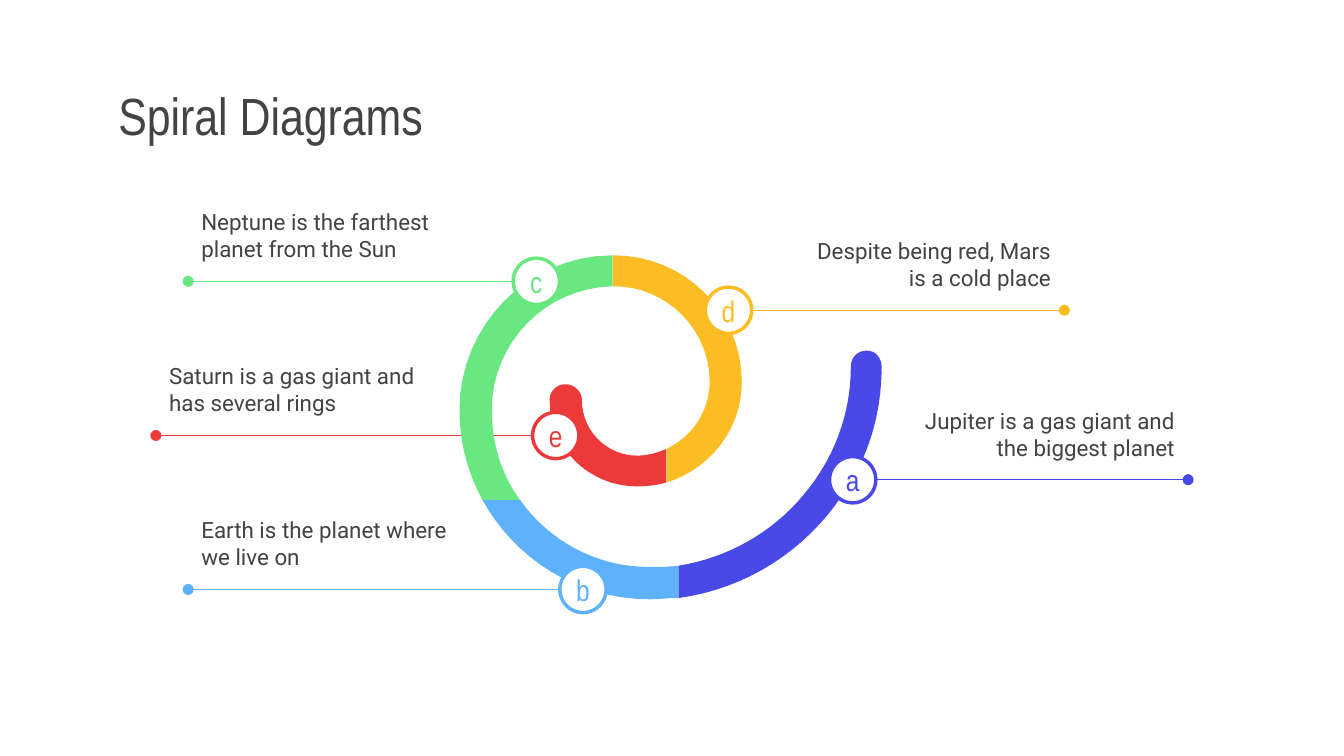
from dataclasses import dataclass

from lxml import etree
from pptx import Presentation
from pptx.dml.color import RGBColor
from pptx.enum.shapes import MSO_CONNECTOR, MSO_SHAPE
from pptx.enum.text import MSO_ANCHOR, MSO_AUTO_SIZE, PP_ALIGN
from pptx.oxml.ns import qn
from pptx.util import Pt

LEFT, CENTER, RIGHT = PP_ALIGN.LEFT, PP_ALIGN.CENTER, PP_ALIGN.RIGHT
MIDDLE = MSO_ANCHOR.MIDDLE
NO_FIT = MSO_AUTO_SIZE.NONE
STRAIGHT = MSO_CONNECTOR.STRAIGHT
OVAL = MSO_SHAPE.OVAL


@dataclass(frozen=True)
class Theme:
    ink: str = "434343"
    paper: str = "FFFFFF"
    red: str = "EC3A3B"
    green: str = "69E781"
    yellow: str = "FCBD24"
    blue: str = "5EB2FC"
    indigo: str = "4949E7"
    display_font: str = "Arial Narrow"
    body_font: str = "Roboto"
    title_size: float = 28
    letter_size: float = 16
    body_size: float = 12
    leader_width: float = 0.75
    ring_width: float = 1.83


THEME = Theme()
BADGE_DIAMETER = 24.8
NOTE_WIDTH, NOTE_HEIGHT, NOTE_RISE = 148.3, 41.8, 45.6
CURVE_STEPS = 16

RED_ARC = [
    (303.1, 205.9),
    (298.1, 205.9, 294.5, 209.5, 294.5, 214.6),
    (294.5, 239.8, 315.4, 260.6, 341.3, 260.6),
    (347, 260.6, 352.1, 259.9, 357.1, 258.5),
    (357.1, 240.5),
    (352.1, 242.6, 347, 244.1, 341.3, 244.1),
    (324.7, 244.1, 311.8, 230.4, 311.8, 214.6),
    (311.8, 209.5, 307.4, 205.9, 303.1, 205.9),
]
GREEN_ARC = [
    (328.3, 136.8),
    (283, 136.8, 246.2, 174.2, 246.2, 219.6),
    (246.2, 236.9, 250.6, 253.4, 258.5, 267.8),
    (278.6, 267.8),
    (268.6, 254.2, 263.5, 237.6, 263.5, 219.6),
    (263.5, 183.6, 292.3, 154.1, 328.3, 153.4),
]
YELLOW_ARC = [
    (328.3, 136.8),
    (328.3, 153.4),
    (329, 153.4),
    (357.1, 153.4, 380.2, 176.4, 380.2, 204.5),
    (380.2, 220.3, 370.8, 234, 357.1, 240.5),
    (357.1, 258.5),
    (380.2, 251.3, 397.4, 230.4, 397.4, 204.5),
    (397.4, 167, 366.5, 136.8, 329, 136.8),
]
BLUE_ARC = [
    (258.5, 267.8),
    (275.8, 299.5, 309.6, 321.1, 347.8, 321.1),
    (352.8, 321.1, 358.6, 320.4, 363.6, 320.4),
    (363.6, 303.1),
    (358.6, 303.8, 352.8, 303.8, 347.8, 303.8),
    (319, 303.8, 293.8, 289.4, 278.6, 267.8),
]
INDIGO_ARC = [
    (464.4, 187.9),
    (459.4, 187.9, 455.8, 191.5, 455.8, 196.6),
    (455.8, 222.5, 446.4, 246.2, 430.6, 265),
    (414, 285.1, 390.2, 298.8, 363.6, 303.1),
    (363.6, 320.4),
    (400.3, 315.4, 432, 294.5, 451.4, 265),
    (465.1, 245.5, 472.3, 221.8, 472.3, 196.6),
    (472.3, 191.5, 468.7, 187.9, 464.4, 187.9),
]

PLANETS = [
    ("e", "Saturn is a gas giant and has several rings", THEME.red, RED_ARC, (297.7, 233.3), 83.5),
    ("c", "Neptune is the farthest planet from the Sun", THEME.green, GREEN_ARC, (287.3, 150.7), 100.8),
    ("d", "Despite being red, Mars is a cold place", THEME.yellow, YELLOW_ARC, (390.3, 166.2), 570.2),
    ("b", "Earth is the planet where we live on", THEME.blue, BLUE_ARC, (312.3, 315.8), 100.8),
    ("a", "Jupiter is a gas giant and the biggest planet", THEME.indigo, INDIGO_ARC, (456.8, 257), 636.5),
]


def color(value):
    return RGBColor.from_string(value)


def write_text(frame, text, *, font, size, ink, align=LEFT, margin=7.2):
    frame.word_wrap = True
    frame.auto_size = NO_FIT
    frame.vertical_anchor = MIDDLE
    frame.margin_left = frame.margin_right = Pt(margin)
    frame.margin_top = frame.margin_bottom = Pt(margin)
    paragraph = frame.paragraphs[0]
    paragraph.alignment = align
    run = paragraph.add_run()
    run.text = text
    run.font.name = font
    run.font.size = Pt(size)
    run.font.color.rgb = color(ink)


def trace(segments):
    points = [segments[0]]
    for segment in segments[1:]:
        if len(segment) == 2:
            points.append(segment)
            continue
        x0, y0 = points[-1]
        x1, y1, x2, y2, x3, y3 = segment
        for step in range(1, CURVE_STEPS + 1):
            t = step / CURVE_STEPS
            weights = ((1 - t) ** 3, 3 * t * (1 - t) ** 2, 3 * t**2 * (1 - t), t**3)
            x = sum(w * v for w, v in zip(weights, (x0, x1, x2, x3)))
            y = sum(w * v for w, v in zip(weights, (y0, y1, y2, y3)))
            points.append((x, y))
    return [(Pt(x), Pt(y)) for x, y in points]


class SpiralSlide:
    def __init__(self, slide, theme):
        self.slide = slide
        self.shapes = slide.shapes
        self.theme = theme

    def title(self, text, left, top, width, height):
        title = self.shapes.title
        title.left, title.top = Pt(left), Pt(top)
        title.width, title.height = Pt(width), Pt(height)
        write_text(title.text_frame, text, font=self.theme.display_font,
                   size=self.theme.title_size, ink=self.theme.ink)

    def leader(self, dot_x, badge_x, y, hue):
        leader = self.shapes.add_connector(STRAIGHT, Pt(dot_x), Pt(y), Pt(badge_x), Pt(y))
        leader.line.color.rgb = color(hue)
        leader.line.width = Pt(self.theme.leader_width)
        etree.SubElement(leader.line._get_or_add_ln(), qn("a:headEnd"), type="oval")
        etree.SubElement(leader._element.spPr, qn("a:effectLst"))

    def arc(self, segments, hue):
        start, *rest = trace(segments)
        builder = self.shapes.build_freeform(*start)
        builder.add_line_segments(rest, close=True)
        arc = builder.convert_to_shape()
        arc.shadow.inherit = False
        arc.fill.solid()
        arc.fill.fore_color.rgb = color(hue)
        arc.line.fill.background()

    def badge(self, letter, x, y, hue):
        radius = BADGE_DIAMETER / 2
        badge = self.shapes.add_shape(OVAL, Pt(x - radius), Pt(y - radius),
                                      Pt(BADGE_DIAMETER), Pt(BADGE_DIAMETER))
        badge.shadow.inherit = False
        badge.fill.solid()
        badge.fill.fore_color.rgb = color(self.theme.paper)
        badge.line.color.rgb = color(hue)
        badge.line.width = Pt(self.theme.ring_width)
        write_text(badge.text_frame, letter, font=self.theme.display_font,
                   size=self.theme.letter_size, ink=hue, align=CENTER, margin=0)

    def note(self, text, left, top, align):
        note = self.shapes.add_textbox(Pt(left), Pt(top), Pt(NOTE_WIDTH), Pt(NOTE_HEIGHT))
        write_text(note.text_frame, text, font=self.theme.body_font,
                   size=self.theme.body_size, ink=self.theme.ink, align=align)

    def planet(self, letter, fact, hue, segments, center, dot_x):
        x, y = center
        on_left = dot_x < x
        edge = x - BADGE_DIAMETER / 2 if on_left else x + BADGE_DIAMETER / 2
        self.leader(dot_x, edge, y, hue)
        self.arc(segments, hue)
        self.badge(letter, x, y, hue)
        self.note(fact, dot_x if on_left else dot_x - NOTE_WIDTH, y - NOTE_RISE,
                  LEFT if on_left else RIGHT)


def main():
    deck = Presentation()
    deck.slide_width, deck.slide_height = Pt(720), Pt(405)
    page = SpiralSlide(deck.slides.add_slide(deck.slide_layouts[5]), THEME)
    page.title("Spiral Diagrams", 56.2, 42.5, 608.4, 38.2)
    for planet in PLANETS:
        page.planet(*planet)
    deck.save("out.pptx")


if __name__ == "__main__":
    main()
